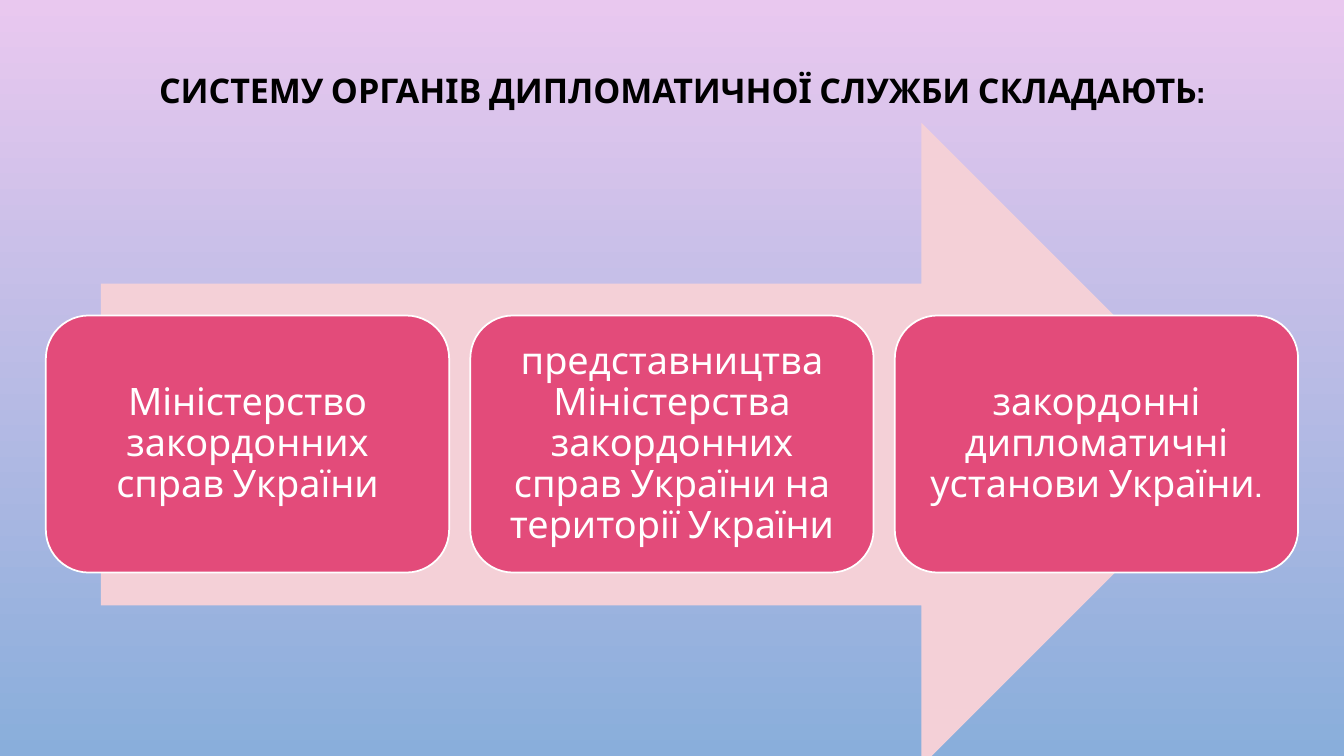
from dataclasses import dataclass

from pptx import Presentation
from pptx.dml.color import RGBColor
from pptx.enum import shapes, text
from pptx.util import Inches, Pt


@dataclass(frozen=True)
class Theme:
    font: str = "Cabin"
    title_size: float = 24.3
    card_size: float = 27
    line_width: float = 1.25
    sky_top: str = "E9C8EF"
    sky_bottom: str = "89AEDB"
    arrow: str = "F4D0D7"
    card: str = "E34B7A"
    white: str = "FFFFFF"
    black: str = "000000"


@dataclass(frozen=True)
class Box:
    left: float
    top: float
    width: float
    height: float

    def lengths(self) -> tuple:
        return tuple(map(Inches, (self.left, self.top, self.width, self.height)))


THEME = Theme()
SLIDE_W, SLIDE_H = 13.33, 7.5
CARD_W, CARD_H, CARD_TOP, CARD_GAP = 4, 2.55, 3.13, 0.21
TITLE = "СИСТЕМУ ОРГАНІВ ДИПЛОМАТИЧНОЇ СЛУЖБИ СКЛАДАЮТЬ:"
BODIES = (
    "Міністерство закордонних справ України",
    "представництва Міністерства закордонних справ України на території України",
    "закордонні дипломатичні установи України.",
)


def rgb(value: str) -> RGBColor:
    return RGBColor.from_string(value)


def write(sp, words: str, size: float, color: str, inset: float,
          anchor: text.MSO_ANCHOR, bold: bool = False) -> None:
    tf = sp.text_frame
    tf.text = words
    tf.word_wrap = True
    tf.vertical_anchor = anchor
    tf.margin_left = tf.margin_right = tf.margin_top = tf.margin_bottom = Inches(inset)
    p = tf.paragraphs[0]
    p.alignment = text.PP_ALIGN.CENTER
    p.line_spacing = 0.9
    r = p.runs[0]
    r.font.name = THEME.font
    r.font.size = Pt(size)
    r.font.bold = bold
    r.font.color.rgb = rgb(color)


def add_filled(s, kind: shapes.MSO_SHAPE, box: Box, color: str):
    sp = s.shapes.add_shape(kind, *box.lengths())
    sp.shadow.inherit = False
    sp.fill.solid()
    sp.fill.fore_color.rgb = rgb(color)
    sp.line.fill.background()
    return sp


def add_card(s, box: Box, words: str) -> None:
    sp = add_filled(s, shapes.MSO_SHAPE.ROUNDED_RECTANGLE, box, THEME.card)
    sp.line.color.rgb = rgb(THEME.white)
    sp.line.width = Pt(THEME.line_width)
    write(sp, words, THEME.card_size, THEME.white, 0.11, text.MSO_ANCHOR.MIDDLE)


def paint_background(s) -> None:
    fill = s.background.fill
    fill.gradient()
    fill.gradient_angle = 270
    for stop, color in zip(fill.gradient_stops, (THEME.sky_top, THEME.sky_bottom)):
        stop.color.rgb = rgb(color)


def main() -> None:
    prs = Presentation()
    prs.slide_width, prs.slide_height = Inches(SLIDE_W), Inches(SLIDE_H)
    s = prs.slides.add_slide(prs.slide_layouts[6])
    paint_background(s)

    title = s.shapes.add_textbox(*Box(1.1, 0.74, 11.33, 0.86).lengths())
    write(title, TITLE, THEME.title_size, THEME.black, 0, text.MSO_ANCHOR.TOP, bold=True)

    add_filled(s, shapes.MSO_SHAPE.RIGHT_ARROW, Box(1, 1.22, 11.33, 6.38), THEME.arrow)

    pitch = CARD_W + CARD_GAP
    first = (SLIDE_W - len(BODIES) * pitch + CARD_GAP) / 2
    for i, words in enumerate(BODIES):
        add_card(s, Box(first + i * pitch, CARD_TOP, CARD_W, CARD_H), words)

    prs.save("out.pptx")


if __name__ == "__main__":
    main()
